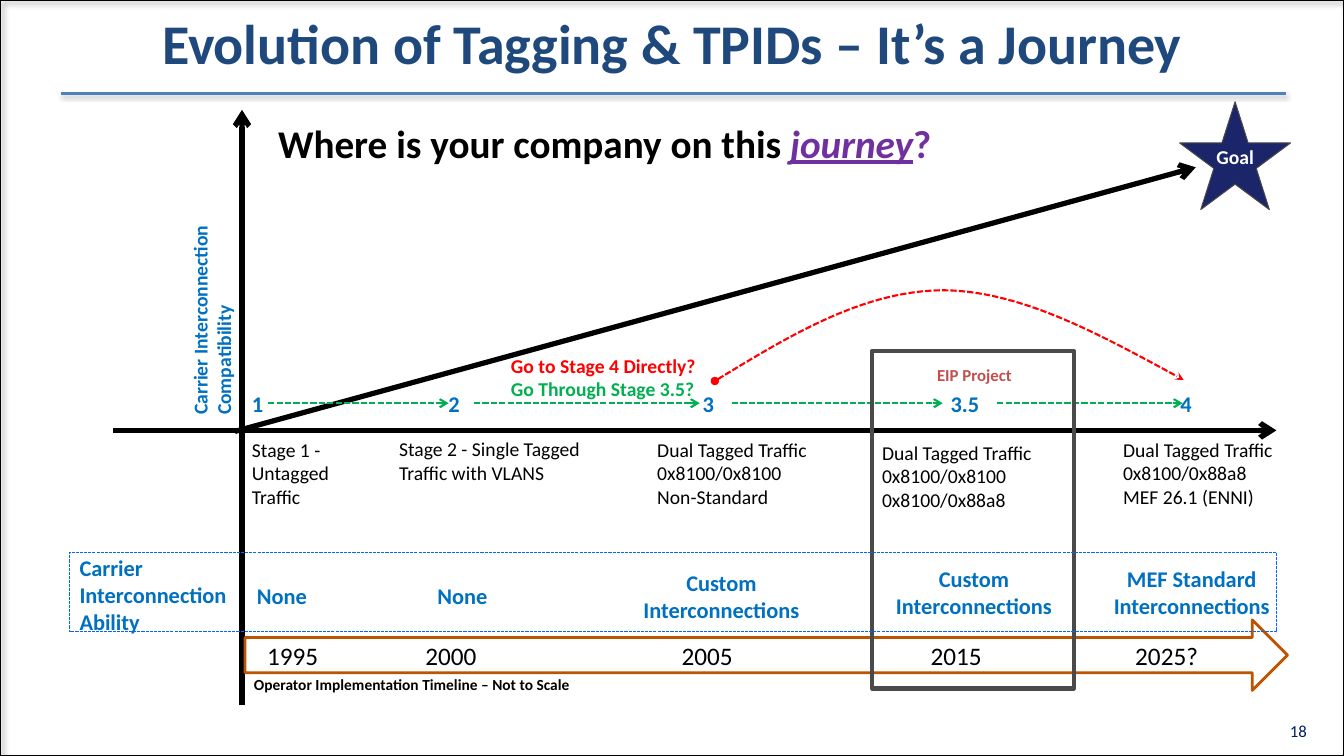
import pptx
import pptx.util
import pptx.dml.color
import pptx.enum.dml
import pptx.enum.shapes
import pptx.enum.text
import pptx.oxml
import pptx.oxml.ns
import lxml.etree

PX = 9144  # 100 px to the inch
FONT = "Calibri"
HUE = {
    "black": "000000", "white": "FFFFFF", "navy": "002060", "title": "1F497D",
    "rule": "4F81BD", "blue": "0070C0", "edge": "0066FF", "star": "1B256A",
    "gray": "4A4A4A", "green": "00B050", "red": "FF0000", "brick": "C0504D",
    "rust": "BD5400", "plum": "7030A0",
}
KIND = pptx.enum.shapes.MSO_SHAPE
ALIGN = {"l": pptx.enum.text.PP_ALIGN.LEFT, "c": pptx.enum.text.PP_ALIGN.CENTER,
         "r": pptx.enum.text.PP_ALIGN.RIGHT}
DASH = pptx.enum.dml.MSO_LINE.SQUARE_DOT


def emu(*vals):
    return [pptx.util.Emu(v * PX) for v in vals]


def rgb(name):
    return pptx.dml.color.RGBColor.from_string(HUE[name])


def node(root, tag, **attrs):
    return lxml.etree.SubElement(root, pptx.oxml.ns.qn(tag),
                                 {k: str(v) for k, v in attrs.items()})


def shade(root, alpha, blur, dist, angle):
    """Add a soft black outer shadow to a property element."""
    for old in root.findall(pptx.oxml.ns.qn("a:effectLst")):
        root.remove(old)
    drop = node(node(root, "a:effectLst"), "a:outerShdw", blurRad=int(blur * 12700),
                dist=int(dist * 12700), dir=angle * 60000, algn="tl", rotWithShape=0)
    node(node(drop, "a:srgbClr", val=HUE["black"]), "a:alpha", val=alpha * 1000)


def stroke(line, hue, width, dash=False, head=None, tail=None):
    line.color.rgb = rgb(hue)
    line.width = pptx.util.Pt(width)
    if dash:
        line.dash_style = DASH
    ends = line._get_or_add_ln()
    if head:
        node(ends, "a:headEnd", type=head)
    if tail:
        node(ends, "a:tailEnd", type=tail)


def style(font, size=14, hue="black", bold=False, slant=False, under=False):
    font.name = FONT
    font.size = pptx.util.Pt(size)
    font.color.rgb = rgb(hue)
    font.bold, font.italic, font.underline = bold, slant, under


def write(shape, body, align="l", mid=False, wrap=True, inset=10, tabs=(), **look):
    """Fill a shape: body is text, or a list of (text, changes) for mixed runs."""
    frame = shape.text_frame
    frame.word_wrap = wrap
    frame.margin_left, frame.margin_right = emu(inset, 10)
    frame.margin_top, frame.margin_bottom = emu(5, 5)
    anchor = pptx.enum.text.MSO_ANCHOR
    frame.vertical_anchor = anchor.MIDDLE if mid else anchor.TOP
    rows = [[(row, {})] for row in body.split("\n")] if isinstance(body, str) else [body]
    for i, row in enumerate(rows):
        para = frame.add_paragraph() if i else frame.paragraphs[0]
        para.alignment = ALIGN[align]
        if tabs:
            stops = node(para._p.get_or_add_pPr(), "a:tabLst")
            for stop in tabs:
                node(stops, "a:tab", pos=stop * PX, algn="l")
        for words, change in row:
            if words == "\v":
                para.add_line_break()
                continue
            run = para.add_run()
            run.text = words
            style(run.font, **{**look, **change})
    return shape


def text(slide, box, body, turn=0, **look):
    shape = slide.shapes.add_textbox(*emu(*box))
    shape.rotation = turn
    return write(shape, body, **look)


def block(slide, kind, box, fill=None, line=None):
    shape = slide.shapes.add_shape(kind, *emu(*box))
    shape.shadow.inherit = False
    if fill:
        shape.fill.solid()
        shape.fill.fore_color.rgb = rgb(fill)
    else:
        shape.fill.background()
    if line:
        stroke(shape.line, *line)
    else:
        shape.line.fill.background()
    return shape


def link(slide, ends, hue, width, **look):
    wire = slide.shapes.add_connector(pptx.enum.shapes.MSO_CONNECTOR.STRAIGHT, *emu(*ends))
    stroke(wire.line, hue, width, **look)
    node(wire._element.spPr, "a:effectLst")
    return wire


def curve(slide, start, points, hue, width, **look):
    """Draw a Bezier path; every three points make one cubic piece."""
    pen = slide.shapes.build_freeform(*start, scale=PX)
    pen.add_line_segments(points, close=False)
    shape = pen.convert_to_shape()
    shape.shadow.inherit = False
    shape.fill.background()
    stroke(shape.line, hue, width, **look)
    steps = list(shape._element.iter(pptx.oxml.ns.qn("a:lnTo")))
    track = steps[0].getparent()
    for i in range(0, len(steps), 3):
        piece = node(track, "a:cubicBezTo")
        for step in steps[i:i + 3]:
            piece.append(step[0])
            track.remove(step)


def main():
    deck = pptx.Presentation()
    deck.slide_width, deck.slide_height = emu(1333, 750)
    slide = deck.slides.add_slide(deck.slide_layouts[6])

    # Page frame, number and title
    frame = block(slide, KIND.RECTANGLE, (0, 0, 1333, 750), line=("black", 1.5))
    shade(frame._element.spPr, 40, 4, 3, 45)
    text(slide, (1266, 710, 40, 30), "18", align="r", wrap=False, size=12, hue="navy")
    rule = link(slide, (61, 93, 1275, 93), "rule", 2)
    shade(rule._element.spPr, 38, 3.1, 1.6, 90)
    title = text(slide, (0, 0, 1333, 84), "Evolution of Tagging & TPIDs – It’s a Journey",
                 align="c", mid=True, size=40, hue="title", bold=True)
    props = title.text_frame.paragraphs[0].runs[0].font._element
    shade(props, 43, 4, 3, 45)
    props.insert(1, props[-1])  # effects stand between fill and typeface

    # Axes
    for ends in ((112, 427, 1266, 427), (240, 699, 240, 109)):
        link(slide, ends, "black", 3.75, tail="arrow")

    # Stage notes under the axis
    for box, note in (
        ((240, 429, 122, 81), "Stage 1 - Untagged Traffic"),
        ((386, 429, 207, 57), "Stage 2 - Single Tagged Traffic with VLANS"),
        ((642, 429, 203, 81), "Dual Tagged Traffic\n0x8100/0x8100\nNon-Standard"),
        ((1104, 429, 185, 81), "Dual Tagged Traffic\n0x8100/0x88a8\nMEF 26.1 (ENNI)"),
    ):
        text(slide, box, note)

    # Stage numbers, growth line and goal
    text(slide, (240, 382, 1027, 37), "1\t2\t3\t3.5\t4", tabs=(195, 447, 693, 921),
         size=16, hue="blue", bold=True)
    link(slide, (233, 428, 1186, 166), "black", 3.75, tail="arrow")
    block(slide, KIND.STAR_5_POINT, (1170, 101, 110, 107), "star", ("gray", 0.75))
    text(slide, (1184, 139, 82, 34), "Goal", align="c", hue="white", bold=True)

    # Steps from stage to stage
    for left, right in ((266, 445), (470, 694), (726, 935), (989, 1173)):
        link(slide, (left, 400, right, 400), "green", 1.5, dash=True, tail="arrow")

    # Timeline
    years = block(slide, KIND.RIGHT_ARROW, (243, 615, 1034, 70), "white", ("rust", 2))
    write(years, "1995\t2000\t2005\t2015\t2025?", mid=True, inset=22,
          tabs=(157, 411, 658, 861), size=18)
    text(slide, (242, 665, 567, 29), "Operator Implementation Timeline – Not to Scale",
         size=11, bold=True)

    # Project window at stage 3.5
    text(slide, (895, 357, 143, 38), "EIP Project", align="c", size=12, hue="brick", bold=True)
    write(block(slide, KIND.RECTANGLE, (865, 432, 214, 81), "white"),
          "Dual Tagged Traffic\n0x8100/0x8100\n0x8100/0x88a8")
    block(slide, KIND.RECTANGLE, (865, 348, 200, 335), line=("gray", 3))

    # Interconnection band
    for box, note, align in (
        ((245, 573, 76, 37), "None", "l"),
        ((69, 545, 181, 91), "Carrier Interconnection Ability", "l"),
        ((424, 573, 76, 37), "None", "l"),
        ((619, 560, 193, 64), "Custom Interconnections", "c"),
        ((870, 556, 192, 64), "Custom Interconnections", "c"),
        ((1086, 556, 192, 64), "MEF Standard Interconnections", "c"),
    ):
        text(slide, box, note, align=align, size=16, hue="blue", bold=True)
    block(slide, KIND.RECTANGLE, (69, 548, 1197, 79), line=("edge", 0.75, True))

    # Direct jump to stage 4
    curve(slide, (709, 378),
          [(783, 333), (856, 289), (934, 288), (1011, 288), (1093, 333), (1174, 377)],
          "red", 1.5, dash=True, head="oval", tail="stealth")
    text(slide, (497, 346, 236, 57),
         [("Go to Stage 4 Directly?", {}), ("\v", {}),
          ("Go Through Stage 3.5?", {"hue": "green"})], hue="red", bold=True)

    # Question and axis label
    text(slide, (266, 113, 706, 57),
         [("Where is your company on this ", {}),
          ("journey", {"hue": "plum", "slant": True, "under": True}),
          ("?", {"hue": "plum"})], size=28, bold=True)
    text(slide, (54, 237, 312, 57), "Carrier Interconnection\nCompatibility",
         turn=270, hue="blue", bold=True)

    deck.save("out.pptx")


if __name__ == "__main__":
    main()
